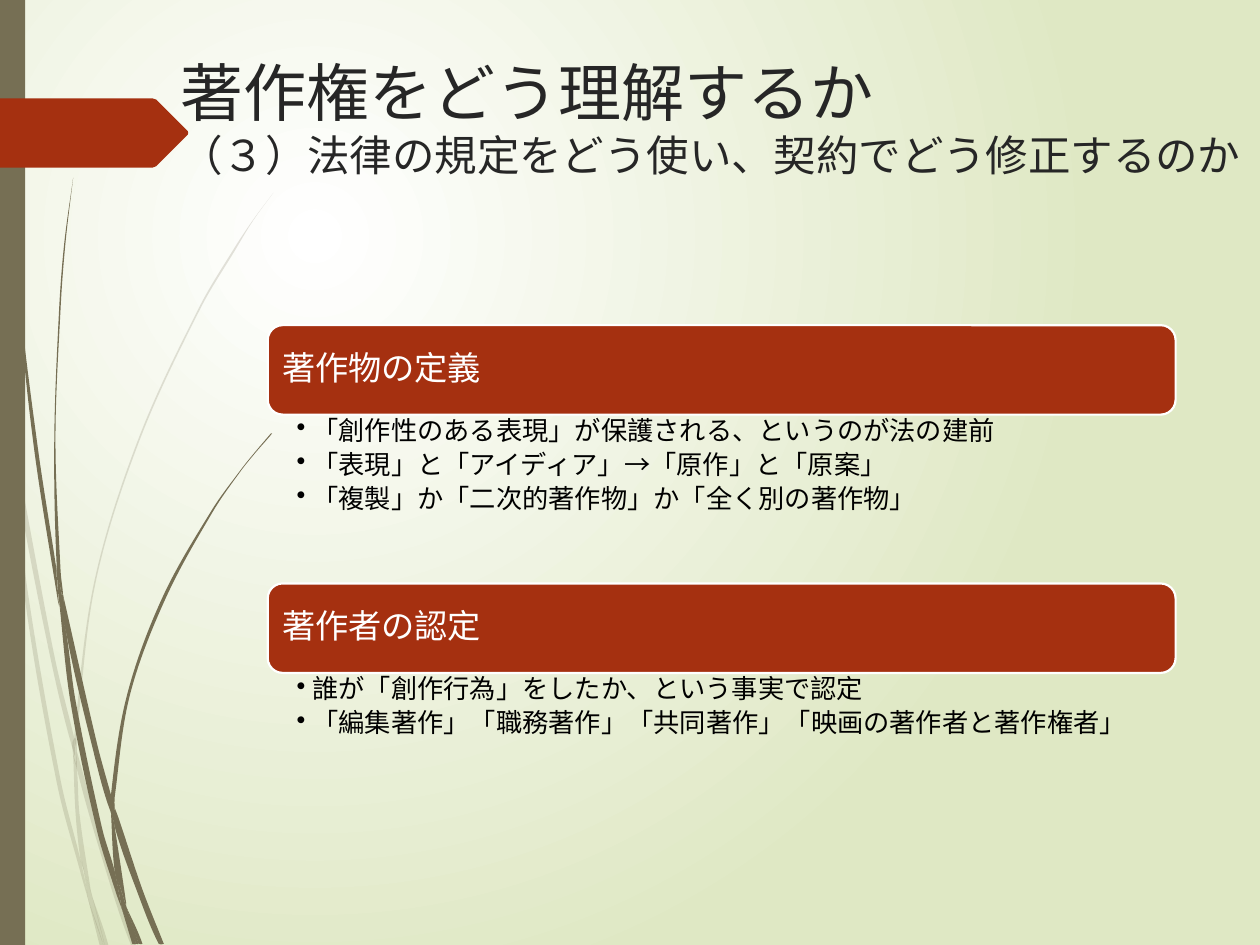
from math import dist

from lxml import etree
from pptx import Presentation
from pptx.dml.color import RGBColor
from pptx.enum.shapes import MSO_SHAPE as SHAPE
from pptx.enum.text import MSO_ANCHOR as ANCHOR
from pptx.oxml.ns import qn
from pptx.util import Pt

COLORS = {"white": "FFFFFF", "green": "DFE8C4", "olive": "766F54",
          "rust": "A53010", "title": "262626", "body": "000000"}
FONT = "League Spartan"

# Each blade of grass: one edge, then the other edge back to the start
PALE_BLADES = [
    ([(5.8, 252), (4.3, 231.8), (0, 203)], [(0, 215.3), (5, 247.7)]),
    ([(7.2, 248.4), (31, 374.4), (42.5, 422)], [(42.5, 431.3), (28.8, 375.8), (8.6, 270.7)]),
    ([(43.9, 429.1), (46.1, 437), (63.4, 498.2), (77.8, 540)],
     [(74.9, 540), (61.2, 499.7), (43.9, 439.2)]),
    ([(52.6, 511.9), (59.8, 540)], [(61.9, 540)]),
    ([(5.8, 252), (8.6, 270.7), (15.8, 337.7), (34.6, 445.7), (46.1, 491.8),
      (49.7, 509), (50.4, 514.1)], [(46.1, 499), (32.4, 447.1), (13.7, 338.4)]),
    ([(41.8, 431.3), (43.2, 465.1), (46.1, 491.8), (48.2, 498.2), (52.6, 511.9)],
     [(51.8, 508.3), (45.4, 465.1), (43.9, 439.2)]),
    ([(156.2, 110.2), (144.4, 126), (133.9, 141.8), (113.8, 175.7), (79.2, 250.6),
      (54, 331.9), (42.5, 420.5), (43.9, 429.1)],
     [(43.9, 420.5), (54.7, 332.6), (79.9, 251.3), (114.5, 176.4), (134.6, 142.6),
      (144.7, 126)]),
    ([(50.4, 514.1), (56.9, 540)], [(59, 540)]),
    ([(43.9, 439.2), (43.9, 429.1)], [(42.5, 421.9), (41.8, 431.3)]),
    ([(46.8, 491.8), (49.7, 509), (50.4, 514.1), (59, 540)],
     [(59.8, 540), (52.6, 511.9), (48.2, 498.2)]),
]
DARK_BLADES = [
    ([(1.4, 0), (2.2, 34.6), (3.6, 79.2), (10.1, 167.8), (19.4, 255.6), (33.1, 343.4),
      (33.8, 346.3)],
     [(32.4, 329), (32.4, 326.2), (21.6, 255.6), (10.8, 167), (4.3, 78.5), (2.9, 34.6),
      (2.2, 0)]),
    ([(36, 339.8), (55.4, 424.8), (63.4, 454.3)], [(63.4, 464.4), (52.6, 426.2), (38.2, 363.6)]),
    ([(65.5, 461.5), (67.7, 467.3), (81.4, 508.3), (93.6, 539.3)],
     [(90.7, 539.3), (78.5, 509.8), (65.5, 472.3)]),
    ([(33.8, 343.4), (38.2, 363.6), (43.2, 400.3), (58.3, 473), (65.5, 497.5),
      (69.1, 516.2), (69.8, 519.8)], [(66.2, 509.8), (55.4, 474.5), (40.3, 401)]),
    ([(41.8, 101.5), (36.7, 139), (33.8, 176.4), (31, 251.3), (32.4, 323.3), (35.3, 339.8)],
     [(36, 339.8), (34.6, 326.2), (31.7, 251.3), (34.6, 176.4), (37.4, 139)]),
    ([(72, 517.7), (79.2, 539.3)], [(81.4, 539.3)]),
    ([(32.4, 323.3), (32.4, 326.2), (33.8, 343.4), (38.2, 363.6)],
     [(36, 339.8), (35.3, 339.8)]),
    ([(154.8, 247.7), (146.2, 257.8), (137.5, 268.6), (121, 291.6), (92.9, 341.3),
      (72.7, 396.7), (63.4, 454.3), (65.5, 461.5)],
     [(65.5, 455.8), (74.2, 397.4), (94.3, 342.7), (121.7, 292.3), (137.5, 269.3),
      (146.2, 258.5), (155.5, 247.7)]),
    ([(69.8, 519.8), (75.6, 539.3)], [(77.8, 539.3)]),
    ([(63.4, 464.4), (65.5, 497.5), (69.1, 508.3), (72, 517.7)],
     [(72, 515.5), (65.5, 472.3), (64.8, 468.7)]),
    ([(63.4, 454.3), (63.4, 464.4), (64.8, 468.7), (65.5, 472.3)], [(65.5, 461.5)]),
    ([(65.5, 497.5), (69.1, 516.2), (69.8, 519.8), (77.8, 539.3)],
     [(79.2, 539.3), (72, 517.7), (69.1, 508.3)]),
]
TAG = [(0, 56.2), (87.1, 56.2), (89.3, 56.9), (107.3, 74.9), (107.6, 76),
       (107.3, 77), (89.3, 95), (87.1, 95.8), (0, 95.8)]

TOPICS = [
    ("著作物の定義", 96.5, ["「創作性のある表現」が保護される、というのが法の建前",
                      "「表現」と「アイディア」→「原作」と「原案」",
                      "「複製」か「二次的著作物」か「全く別の著作物」"]),
    ("著作者の認定", 63.4, ["誰が「創作行為」をしたか、という事実で認定",
                      "「編集著作」「職務著作」「共同著作」「映画の著作者と著作権者」"]),
]


def rgb(name):
    return RGBColor.from_string(COLORS[name])


def paint(sp, color, alpha=None):
    sp.shadow.inherit = False
    sp.fill.solid()
    sp.fill.fore_color.rgb = rgb(color)
    sp.line.fill.background()
    if alpha:
        clr = sp.fill._xPr.find(".//" + qn("a:srgbClr"))
        etree.SubElement(clr, qn("a:alpha"), val=str(alpha * 1000))


def add_outline(s, points, color, alpha=None):
    emu = [(Pt(x), Pt(y)) for x, y in points]
    builder = s.shapes.build_freeform(*emu[0])
    builder.add_line_segments(emu[1:], close=True)
    sp = builder.convert_to_shape()
    paint(sp, color, alpha)
    return sp


def handle(at, before, after, length):
    """Control point a third of the length from a knot, along its tangent."""
    span = dist(before, after) or 1
    return tuple(k + (b - a) / span * length / 3 for k, a, b in zip(at, before, after))


def bend(sp, turn):
    """Turn the straight edges into curves, with corners at the ends and at turn."""
    knots = [(int(pt.get("x")), int(pt.get("y"))) for pt in sp._element.iter(qn("a:pt"))]
    lines = list(sp._element.iter(qn("a:lnTo")))
    for i, line in enumerate(lines):
        b, c = knots[i], knots[i + 1]
        a = b if i in (0, turn) else knots[i - 1]
        d = c if i + 1 in (turn, len(lines)) else knots[i + 2]
        curve = etree.Element(qn("a:cubicBezTo"))
        for x, y in (handle(b, a, c, dist(b, c)), handle(c, d, b, dist(b, c)), c):
            etree.SubElement(curve, qn("a:pt"), x=str(round(x)), y=str(round(y)))
        line.getparent().replace(line, curve)


def add_textbox(s, box, anchor, insets):
    tf = s.shapes.add_textbox(*map(Pt, box)).text_frame
    sides = zip(("left", "top", "right", "bottom"), insets)
    fmt = {"word_wrap": True, "vertical_anchor": anchor,
           **{f"margin_{side}": Pt(v) for side, v in sides}}
    for name, value in fmt.items():
        setattr(tf, name, value)
    return tf


def add_run(p, text, size, color):
    r = p.add_run()
    r.text = text
    for name, value in {"name": FONT, "size": Pt(size)}.items():
        setattr(r.font, name, value)
    r.font.color.rgb = rgb(color)


def draw_background(s):
    fill = s.background.fill
    fill.gradient()
    for stop, color in zip(fill.gradient_stops, ("white", "green")):
        stop.color.rgb = rgb(color)
    grad = s.element.find(".//" + qn("a:gradFill"))
    grad.remove(grad.find(qn("a:lin")))
    way = etree.SubElement(grad, qn("a:path"), path="circle")
    etree.SubElement(way, qn("a:fillToRect"), l="50000", t="50000", r="100000", b="100000")


def draw_decoration(s, box):
    x, y, w, h = box
    for blades, alpha in ((PALE_BLADES, 20), (DARK_BLADES, None)):
        for out, back in blades:
            edge = [(x + px, y + py) for px, py in [*out, *back, out[0]]]
            bend(add_outline(s, edge, "olive", alpha), len(out) - 1)
    paint(s.shapes.add_shape(SHAPE.RECTANGLE, Pt(x), Pt(y), Pt(14.4), Pt(h)), "olive")
    add_outline(s, [(x + px, y + py) for px, py in TAG], "rust")


def draw_title(s, box):
    p = add_textbox(s, box, ANCHOR.MIDDLE, (7.2, 3.6, 7.2, 3.6)).paragraphs[0]
    add_run(p, "著作権をどう理解するか", 36, "title")
    p.add_line_break()
    add_run(p, "（３）法律の規定をどう使い、契約でどう修正するのか", 24.3, "title")


def draw_topic(s, box, heading, points, bar_h):
    x, y, w, h = box
    # Heading bar
    bar = s.shapes.add_shape(SHAPE.ROUNDED_RECTANGLE, *map(Pt, (x, y, w, bar_h)))
    paint(bar, "rust")
    bar.line.color.rgb = rgb("white")
    bar.line.width = Pt(1.25)
    pad = 2.5
    label = (x + pad, y + pad, w - 2 * pad, bar_h - 2 * pad)
    p = add_textbox(s, label, ANCHOR.MIDDLE, (5.7,) * 4).paragraphs[0]
    p.line_spacing = 0.9
    add_run(p, heading, 19, "white")
    # Bulleted points
    tf = add_textbox(s, (x, y + bar_h, w, h - bar_h), ANCHOR.TOP, (16.5, 1.9, 10.7, 1.9))
    for i, text in enumerate(points):
        p = tf.add_paragraph() if i else tf.paragraphs[0]
        for name, value in {"level": 1, "line_spacing": 0.9, "space_after": Pt(3.2)}.items():
            setattr(p, name, value)
        pPr = p._p.get_or_add_pPr()
        pPr.set("marL", str(Pt(9)))
        pPr.set("indent", str(-Pt(9)))
        etree.SubElement(pPr, qn("a:buChar"), char="•")
        add_run(p, text, 15, "body")


def draw_topics(s, box, bar_h=51.1):
    x, y, w = box
    for heading, body_h, points in TOPICS:
        draw_topic(s, (x, y, w, bar_h + body_h), heading, points, bar_h)
        y += bar_h + body_h


def main():
    prs = Presentation()
    prs.slide_width, prs.slide_height = Pt(720), Pt(540)
    s = prs.slides.add_slide(prs.slide_layouts[6])
    draw_background(s)
    draw_decoration(s, (0, 0, 720, 540))
    draw_title(s, (96, 21.6, 624, 90))
    draw_topics(s, (153, 185.8, 518.8))
    prs.save("out.pptx")


if __name__ == "__main__":
    main()
